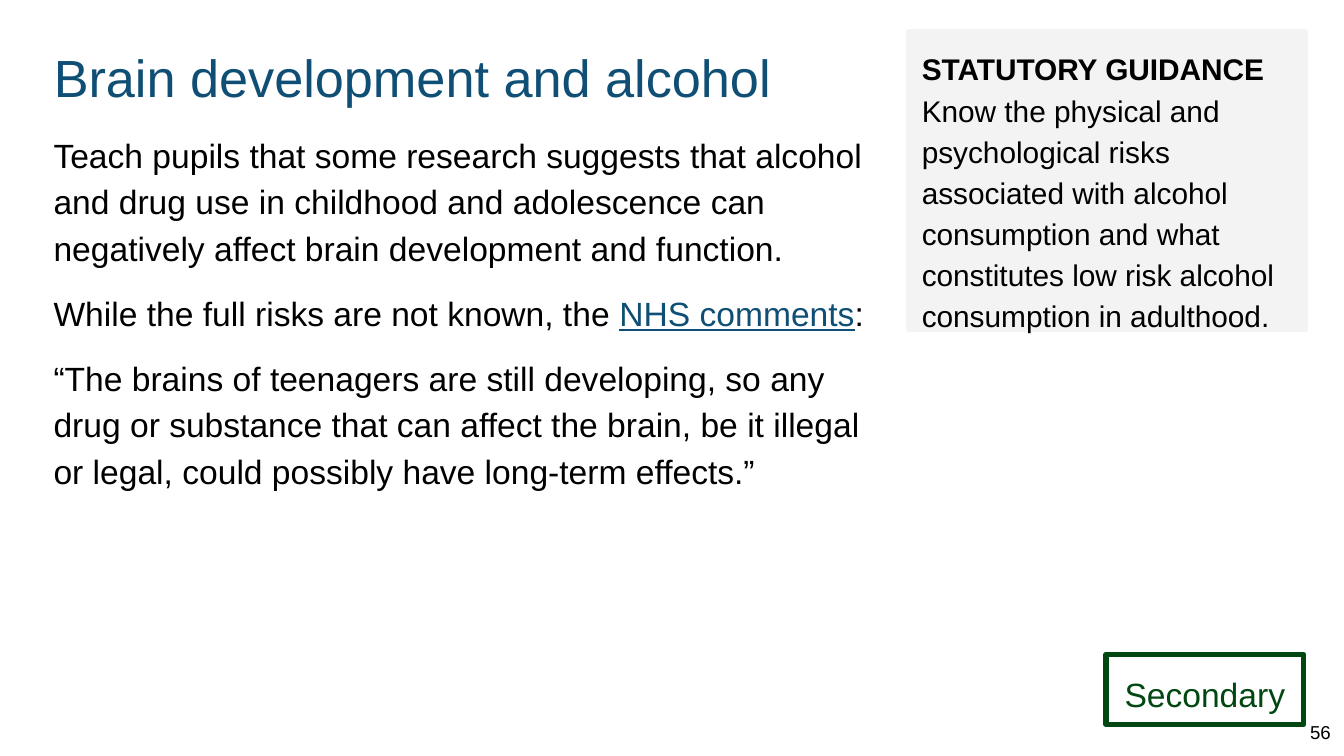
from copy import deepcopy
from dataclasses import dataclass

from pptx import Presentation
from pptx.dml.color import RGBColor as RGB
from pptx.enum.shapes import MSO_SHAPE as SHAPE
from pptx.enum.text import MSO_ANCHOR as ANCHOR, MSO_AUTO_SIZE as FIT, PP_ALIGN as ALIGN
from pptx.util import Inches, Pt


@dataclass(frozen=True)
class Theme:
    font: str = "Arial"
    ink: str = "000000"
    accent: str = "104F75"
    panel: str = "F3F3F3"
    badge: str = "004712"
    title: int = 28
    body: int = 18
    guidance: int = 16
    number: int = 10
    leading: float = 1.15
    gap: int = 10
    border: int = 3


T = Theme()
W = 10
H = W * 9 / 16                      # widescreen
LEFT, TOP, RIGHT = 0.3, 0.24, 9.71  # content edges
SPLIT = 6.76                        # left edge of the side column


def write(sp, paras, size=T.body, color=T.ink, align=ALIGN.LEFT,
          anchor=ANCHOR.TOP, leading=T.leading, gap=0):
    """Fill a shape; each paragraph is a list of (text, run format) pairs."""
    tf = sp.text_frame
    tf.word_wrap, tf.auto_size, tf.vertical_anchor = True, FIT.NONE, anchor
    tf.margin_left = tf.margin_right = tf.margin_top = tf.margin_bottom = Inches(0.1)
    for i, runs in enumerate(paras):
        p = tf.add_paragraph() if i else tf.paragraphs[0]
        p.alignment, p.line_spacing = align, leading
        p.space_before = Pt(gap if i else 0)
        for text, fmt in runs:
            r = p.add_run()
            r.text = text
            r.font.name, r.font.size = T.font, Pt(size)
            r.font.bold = fmt.get("bold", False)
            r.font.underline = fmt.get("underline", False)
            r.font.color.rgb = RGB.from_string(fmt.get("color", color))
            if fmt.get("line_break"):
                p.add_line_break()
                p._p[-1].append(deepcopy(r._r.rPr))  # break keeps the run's size


def place(box):
    return [Inches(v) for v in box]


def add_title(slide, box, text):
    sp = slide.shapes.title
    sp.left, sp.top, sp.width, sp.height = place(box)
    write(sp, [[(text, {})]], size=T.title, color=T.accent, leading=1)


def add_text(slide, box, paras, **fmt):
    write(slide.shapes.add_textbox(*place(box)), paras, **fmt)


def add_panel(slide, box, paras, line, fill=None, **fmt):
    sp = slide.shapes.add_shape(SHAPE.RECTANGLE, *place(box))
    sp.shadow.inherit = False
    if fill:
        sp.fill.solid()
        sp.fill.fore_color.rgb = RGB.from_string(fill)
    else:
        sp.fill.background()
    sp.line.color.rgb = RGB.from_string(line)
    sp.line.width = Pt(T.border)
    write(sp, paras, **fmt)


def build_slide(prs):
    slide = prs.slides.add_slide(prs.slide_layouts[5])

    # Main column: title and teaching points
    add_title(slide, (LEFT, TOP, 6.41, 0.63), "Brain development and alcohol")
    add_text(slide, (LEFT, 0.86, 6.32, 4.01), [
        [("Teach pupils that some research suggests that alcohol and drug use in "
          "childhood and adolescence can negatively affect brain development and "
          "function.", {})],
        [("While the full risks are not known, the ", {}),
         ("NHS comments", {"color": T.accent, "underline": True}),
         (":", {})],
        [("“The brains of teenagers are still developing, so any drug or substance "
          "that can affect the brain, be it illegal or legal, could possibly have "
          "long-term effects.”", {})],
    ], gap=T.gap)

    # Side column: statutory guidance
    add_panel(slide, (SPLIT, TOP, RIGHT - SPLIT, 2.21), [
        [("STATUTORY GUIDANCE", {"bold": True, "line_break": True}),
         ("Know the physical and psychological risks associated with alcohol "
          "consumption and what constitutes low risk alcohol consumption in "
          "adulthood.", {})],
    ], line=T.panel, fill=T.panel, size=T.guidance)

    # Footer: school phase badge and slide number
    add_panel(slide, (8.23, 4.87, 1.47, 0.52), [[("Secondary", {})]],
              line=T.badge, color=T.badge, align=ALIGN.CENTER)
    add_text(slide, (9.61, 5.26, W - 9.61, 0.37), [[("56", {})]], size=T.number,
             align=ALIGN.RIGHT, anchor=ANCHOR.MIDDLE, leading=1)


def main():
    prs = Presentation()
    prs.slide_width, prs.slide_height = Inches(W), Inches(H)
    build_slide(prs)
    prs.save("out.pptx")


if __name__ == "__main__":
    main()
